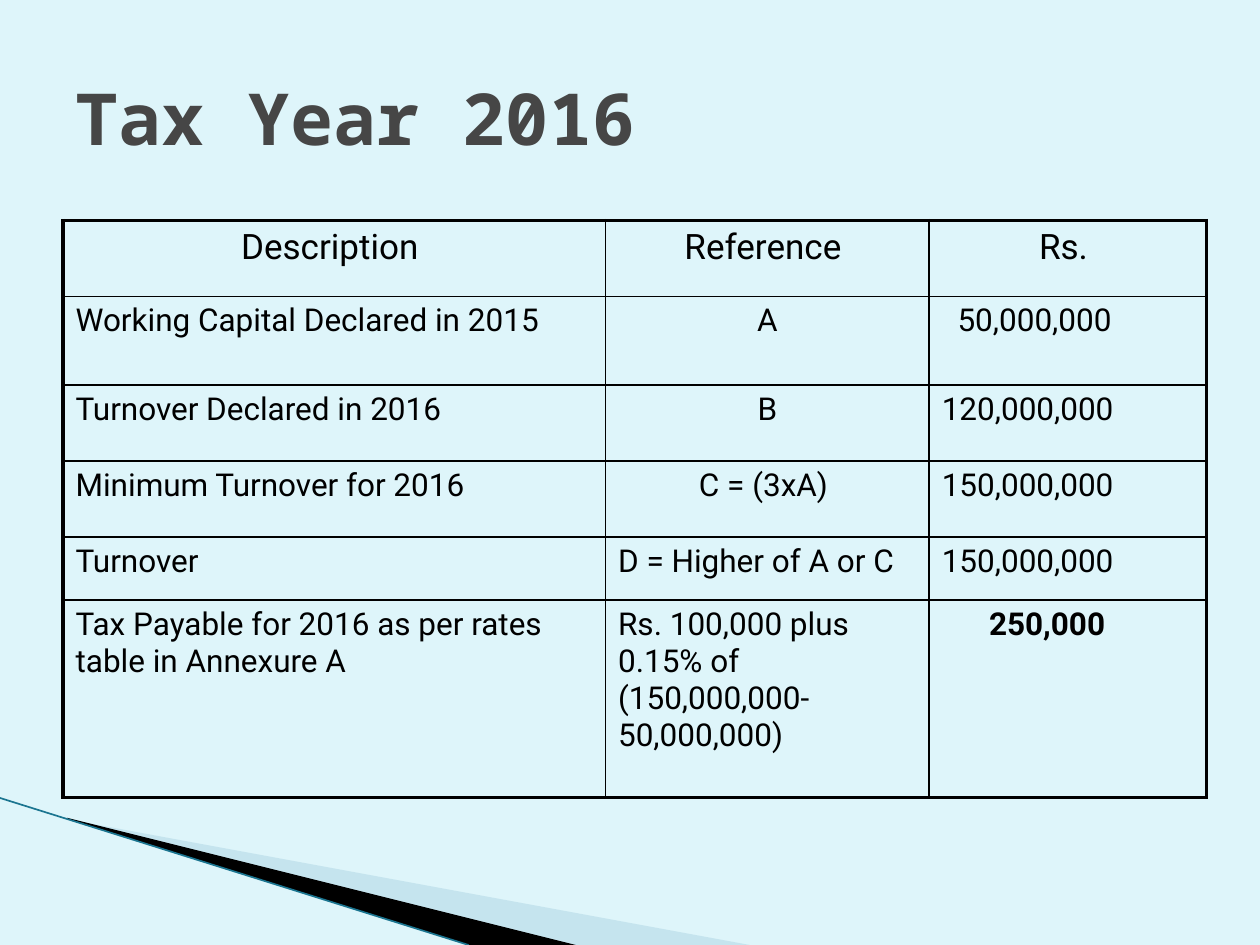
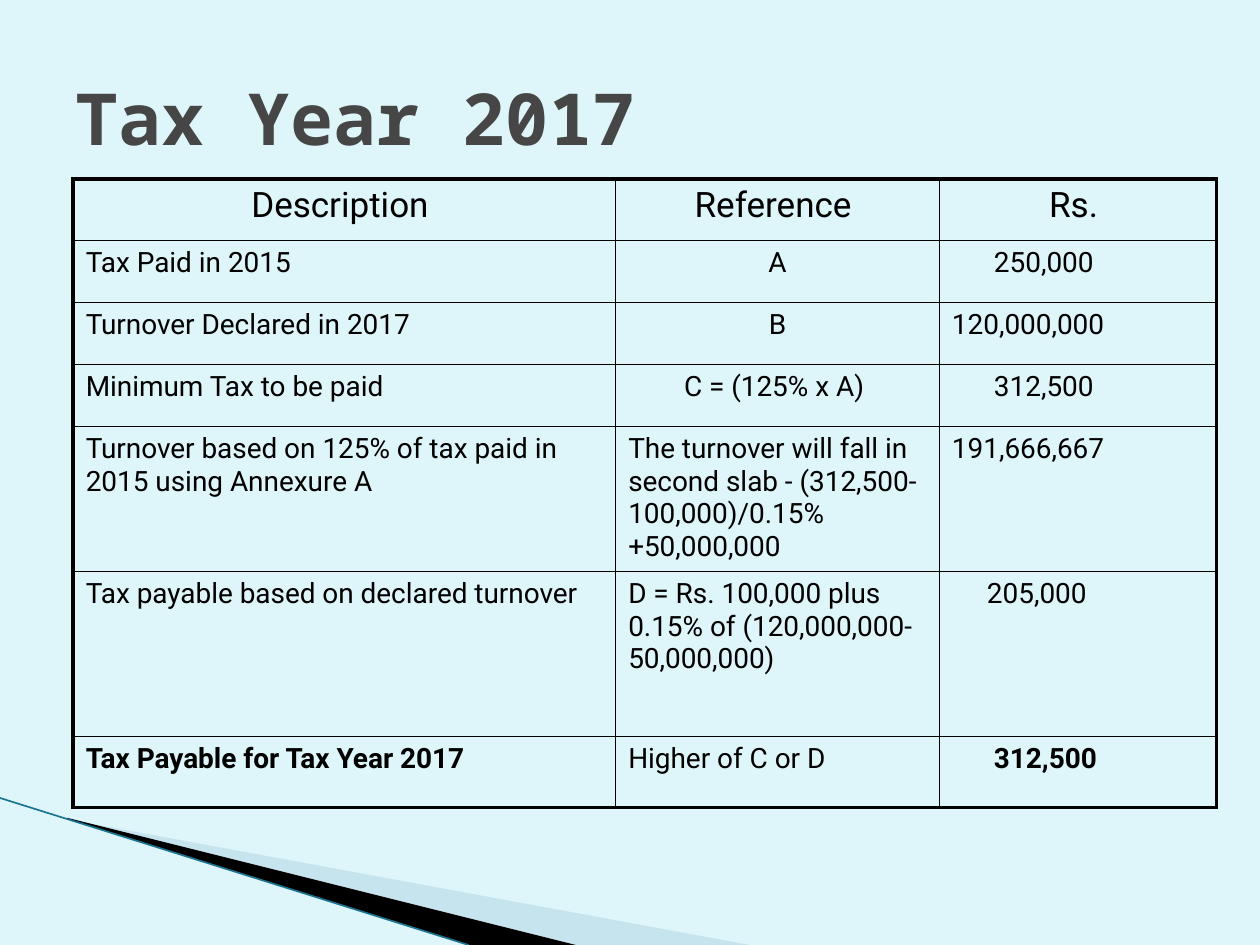
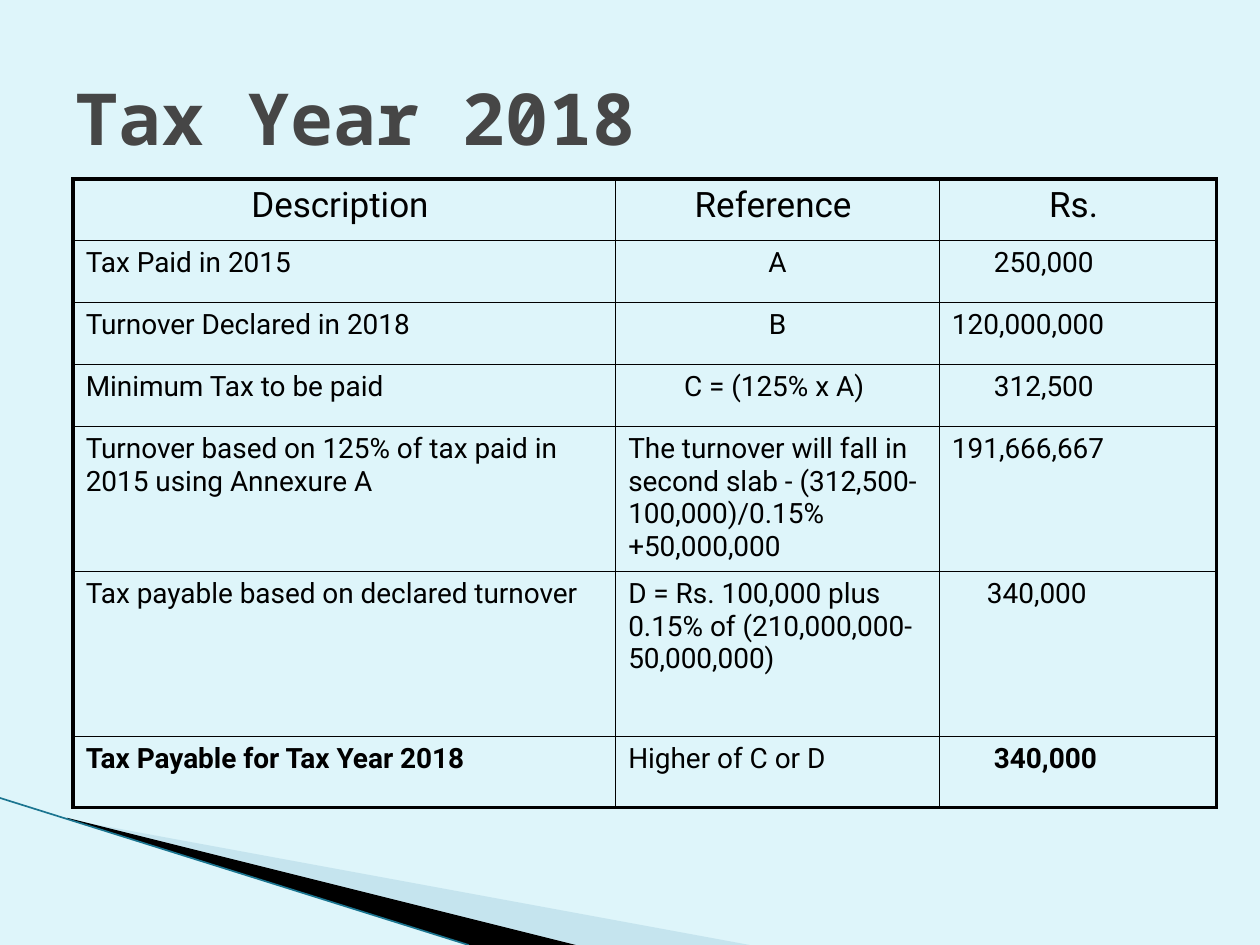
from dataclasses import dataclass
from typing import NamedTuple

from lxml.etree import SubElement
from pptx import Presentation
from pptx.dml.color import RGBColor
from pptx.enum.shapes import MSO_CONNECTOR
from pptx.enum.text import MSO_ANCHOR, PP_ALIGN
from pptx.oxml.ns import qn
from pptx.util import Pt

SKY = RGBColor(0xDE, 0xF5, 0xFA)
MIST = RGBColor(0xA0, 0xCB, 0xDC)
TEAL = RGBColor(0x1B, 0x75, 0x90)
GREY = RGBColor(0x46, 0x46, 0x46)
BLACK = RGBColor(0, 0, 0)
HEAD_FONT = "Noto Sans Mono"
BODY_FONT = "Roboto"
COLS = (310, 185, 158.4)
HEAD_SIZE = 20
INSET = 7.2
THICK, THIN = 2.25, 1


class Entry(NamedTuple):
    text: str
    mid: bool = False
    indent: float = 0
    bold: bool = False


class Wedge(NamedTuple):
    points: tuple[tuple[float, float], ...]
    color: RGBColor
    alpha: int


@dataclass
class Page:
    title: str
    left: float
    top: float
    size: int
    heights: tuple[float, ...]
    rows: list[tuple[Entry, Entry, Entry]]


WEDGES = (
    Wedge(((39.6, 468.4), (428.4, 540), (328.3, 540), (39.6, 468)), MIST, 40),
    Wedge(((38.2, 467.3), (329, 540), (267.8, 540), (38.9, 468)), BLACK, 100),
)
HEADER = (
    Entry("Description ", mid=True),
    Entry("Reference ", mid=True),
    Entry("Rs. ", mid=True),
)


def add_decor(slide) -> None:
    """Draw the swoosh in the bottom left corner."""
    for wedge in WEDGES:
        first, *rest = [(Pt(x), Pt(y)) for x, y in wedge.points]
        pen = slide.shapes.build_freeform(*first)
        pen.add_line_segments(rest)
        shape = pen.convert_to_shape()
        shape.shadow.inherit = False
        shape.line.fill.background()
        shape.fill.solid()
        shape.fill.fore_color.rgb = wedge.color
        if wedge.alpha < 100:
            color = shape.element.spPr.find(".//" + qn("a:srgbClr"))
            SubElement(color, qn("a:alpha"), val=str(wedge.alpha * 1000))
    edge = slide.shapes.add_connector(
        MSO_CONNECTOR.STRAIGHT, Pt(0), Pt(456), Pt(267.8), Pt(540)
    )
    edge.line.color.rgb = TEAL
    edge.line.width = Pt(0.95)
    SubElement(edge.element.spPr, qn("a:effectLst"))


def add_run(para, text: str, font: str, size: float, color: RGBColor, bold: bool) -> None:
    run = para.add_run()
    run.text = text
    run.font.name = font
    run.font.size = Pt(size)
    run.font.color.rgb = color
    run.font.bold = bold


def set_title(slide, text: str) -> None:
    title = slide.shapes.title
    title.left, title.top = Pt(36), Pt(21.6)
    title.width, title.height = Pt(648), Pt(90)
    frame = title.text_frame
    frame.vertical_anchor = MSO_ANCHOR.MIDDLE
    para = frame.paragraphs[0]
    para.alignment = PP_ALIGN.LEFT
    add_run(para, text, HEAD_FONT, 41, GREY, True)


def set_edge(cell, side: str, width: float) -> None:
    line = SubElement(cell._tc.get_or_add_tcPr(), qn("a:" + side), w=str(Pt(width)))
    fill = SubElement(line, qn("a:solidFill"))
    SubElement(fill, qn("a:srgbClr"), val=str(BLACK))


def fill_cell(cell, entry: Entry, size: int, outer: dict[str, bool]) -> None:
    cell.margin_left = Pt(INSET + entry.indent)
    para = cell.text_frame.paragraphs[0]
    para.alignment = PP_ALIGN.CENTER if entry.mid else PP_ALIGN.LEFT
    add_run(para, entry.text, BODY_FONT, size, BLACK, entry.bold)
    for side, thick in outer.items():
        set_edge(cell, side, THICK if thick else THIN)
    cell.fill.background()


def add_grid(slide, page: Page) -> None:
    rows = [HEADER, *page.rows]
    last_row, last_col = len(rows) - 1, len(COLS) - 1
    table = slide.shapes.add_table(
        len(rows), len(COLS), Pt(page.left), Pt(page.top),
        Pt(sum(COLS)), Pt(sum(page.heights)),
    ).table
    table.first_row = table.horz_banding = False
    for col, width in zip(table.columns, COLS):
        col.width = Pt(width)
    for row, height in zip(table.rows, page.heights):
        row.height = Pt(height)
    for r, row in enumerate(rows):
        for c, entry in enumerate(row):
            outer = {"lnL": c == 0, "lnR": c == last_col,
                     "lnT": r == 0, "lnB": r == last_row}
            fill_cell(table.cell(r, c), entry, page.size if r else HEAD_SIZE, outer)


def later_page(year: int, base: str, tax: str, due: str) -> Page:
    """Build a page for a year measured against the tax paid in 2015."""
    rows = [
        (Entry("Tax Paid in 2015"), Entry("A", mid=True), Entry("250,000", indent=24)),
        (Entry(f"Turnover Declared in {year}"), Entry("B", mid=True), Entry("120,000,000")),
        (Entry("Minimum Tax to be paid"), Entry("C = (125% x A) ", mid=True),
         Entry("312,500", indent=24)),
        (Entry("Turnover based on 125% of tax paid in 2015 using Annexure A"),
         Entry("The turnover will fall in second slab - "
               "(312,500-100,000)/0.15%+50,000,000"),
         Entry("191,666,667")),
        (Entry("Tax payable based on declared turnover"),
         Entry(f"D = Rs. 100,000 plus 0.15% of ({base}-50,000,000)"),
         Entry(tax, indent=20)),
        (Entry(f"Tax Payable for Tax Year {year}", bold=True),
         Entry("Higher of C or D"), Entry(due, indent=24, bold=True)),
    ]
    heights = (35.4,) * 4 + (82.9, 94.3, 40.5)
    return Page(f"Tax Year {year}", 41.8, 102.2, 16, heights, rows)


PAGES = (
    Page("Tax Year 2016", 36, 126, 18, (43.4, 50.7, 43.4, 43.4, 36, 113), [
        (Entry("Working Capital Declared in 2015"), Entry("A", mid=True),
         Entry("50,000,000", indent=9)),
        (Entry("Turnover Declared in 2016"), Entry("B", mid=True), Entry("120,000,000")),
        (Entry("Minimum Turnover for 2016"), Entry("C = (3xA) ", mid=True),
         Entry("150,000,000")),
        (Entry("Turnover"), Entry("D = Higher of A or C"), Entry("150,000,000")),
        (Entry("Tax Payable for 2016 as per rates table in Annexure A"),
         Entry("Rs. 100,000 plus 0.15% of (150,000,000-50,000,000)"),
         Entry("250,000", indent=27, bold=True)),
    ]),
    later_page(2017, "120,000,000", "205,000", "312,500"),
    later_page(2018, "210,000,000", "340,000", "340,000"),
)


def main() -> None:
    prs = Presentation()
    prs.slide_width, prs.slide_height = Pt(720), Pt(540)
    back = prs.slide_master.background.fill
    back.solid()
    back.fore_color.rgb = SKY
    layout = prs.slide_layouts.get_by_name("Title Only")
    for page in PAGES:
        slide = prs.slides.add_slide(layout)
        add_decor(slide)
        set_title(slide, page.title)
        add_grid(slide, page)
    prs.save("out.pptx")


if __name__ == "__main__":
    main()
